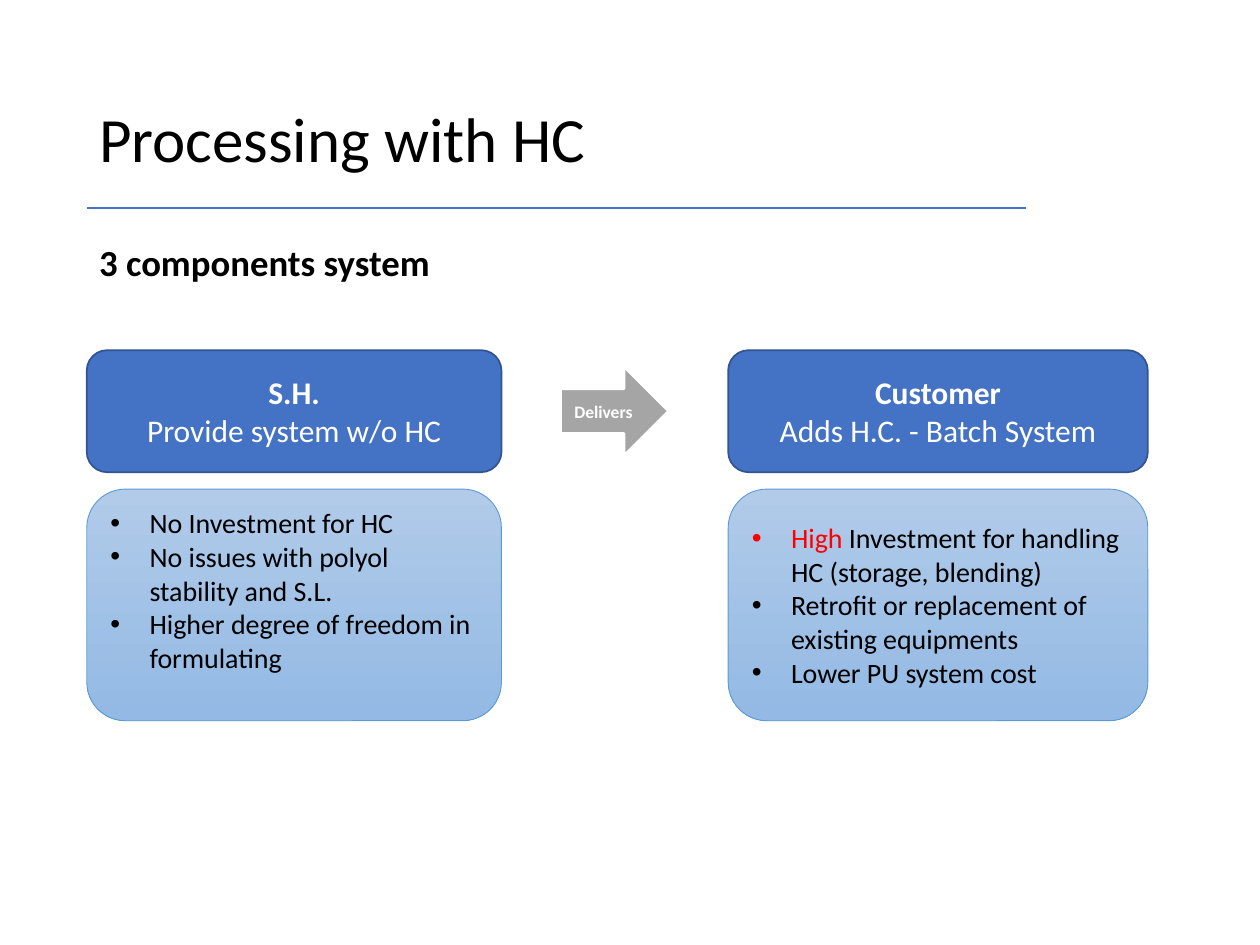
from dataclasses import dataclass

from lxml import etree
from pptx import Presentation
from pptx.dml.color import RGBColor
from pptx.enum.shapes import MSO_CONNECTOR, MSO_SHAPE
from pptx.enum.text import MSO_ANCHOR, PP_ALIGN
from pptx.oxml.ns import qn
from pptx.util import Cm, Pt

ROUND = MSO_SHAPE.ROUNDED_RECTANGLE
ARROW = MSO_SHAPE.RIGHT_ARROW
LINE = MSO_CONNECTOR.STRAIGHT
MIDDLE, TOP = MSO_ANCHOR.MIDDLE, MSO_ANCHOR.TOP
CENTER, LEFT = PP_ALIGN.CENTER, PP_ALIGN.LEFT


@dataclass(frozen=True)
class Theme:
    """Hold the colours, font and type sizes."""
    font: str = "Calibri"
    ink: str = "000000"
    white: str = "FFFFFF"
    blue: str = "4472C4"
    edge: str = "325491"
    rim: str = "5B9BD5"
    light: str = "B1CBE9"
    deep: str = "93B9E4"
    gray: str = "A5A5A5"
    red: str = "FF0000"
    title: int = 36
    sub: int = 21
    head: int = 18
    body: int = 16
    tag: int = 10


THEME = Theme()


def rgb(code):
    """Turn a hex code into a colour."""
    return RGBColor.from_string(code)


def style(para, size, color, bold=False, align=LEFT):
    """Set the font and alignment of a paragraph."""
    para.alignment = align
    font = para.font
    font.name, font.size, font.bold = THEME.font, Pt(size), bold
    font.color.rgb = rgb(color)


def add_text(slide, box, text, size, bold=False, anchor=TOP):
    """Add a one-line text box and return its paragraph."""
    frame = slide.shapes.add_textbox(*map(Cm, box)).text_frame
    frame.word_wrap = True
    frame.vertical_anchor = anchor
    para = frame.paragraphs[0]
    para.text = text
    style(para, size, THEME.ink, bold)
    return para


def add_rule(slide, left, right, top):
    """Draw the level line below the title."""
    rule = slide.shapes.add_connector(LINE, Cm(left), Cm(top), Cm(right), Cm(top))
    rule.line.color.rgb = rgb(THEME.blue)
    rule.line.width = Pt(1)
    etree.SubElement(rule._element.spPr, qn("a:effectLst"))


def add_shape(slide, kind, box, edge, width):
    """Add an outlined shape without shadow."""
    shape = slide.shapes.add_shape(kind, *map(Cm, box))
    shape.shadow.inherit = False
    shape.line.color.rgb = rgb(edge)
    shape.line.width = Pt(width)
    shape.text_frame.vertical_anchor = MIDDLE
    return shape


def add_label(slide, kind, box, fill, edge, width, lines, size):
    """Add a solid shape with centred lines, the first one bold."""
    shape = add_shape(slide, kind, box, edge, width)
    shape.fill.solid()
    shape.fill.fore_color.rgb = rgb(fill)
    frame = shape.text_frame
    frame.text = "\n".join(lines)
    for row, para in enumerate(frame.paragraphs):
        style(para, size, THEME.white, row == 0, CENTER)


def add_bullet(para):
    """Give a paragraph a hanging bullet."""
    props = para._p.get_or_add_pPr()
    props.set("marL", str(Cm(0.79)))
    props.set("indent", str(Cm(-0.79)))
    etree.SubElement(props, qn("a:buFont"), typeface="Arial")
    etree.SubElement(props, qn("a:buChar"), char="•")


def add_list(slide, box, items, base):
    """Add a shaded card of bullets, each made of (text, colour) runs."""
    shape = add_shape(slide, ROUND, box, THEME.rim, 0.5)
    shape.fill.gradient()
    shape.fill.gradient_angle = 270
    for stop, color in zip(shape.fill.gradient_stops, (THEME.light, THEME.deep)):
        stop.color.rgb = rgb(color)
    frame = shape.text_frame
    frame.margin_bottom = Cm(base)
    for row, runs in enumerate(items):
        para = frame.add_paragraph() if row else frame.paragraphs[0]
        add_bullet(para)
        style(para, THEME.body, THEME.ink)
        for text, color in runs:
            run = para.add_run()
            run.text = text
            if color != THEME.ink:
                run.font.color.rgb = rgb(color)


def main():
    """Build the slide and save it."""
    deck = Presentation()
    deck.slide_width, deck.slide_height = Cm(25.4), Cm(19.05)
    slide = deck.slides.add_slide(deck.slide_layouts[6])
    left, ink = 1.75, THEME.ink

    add_rule(slide, left, 20.68, 4.19)
    title = add_text(slide, (left, 1.02, 18.95, 3.68), "Processing with HC",
                     THEME.title, anchor=MIDDLE)
    title.line_spacing = 0.9
    add_text(slide, (left, 4.7, 19.28, 1.14), "3 components system", THEME.sub, True)

    sides = (
        (left, 8.36, ("S.H.", "Provide system w/o HC"), 0.73, (
            [("No Investment for HC", ink)],
            [("No issues with polyol stability and S.L.", ink)],
            [("Higher degree of freedom in formulating", ink)])),
        (14.68, 8.46, ("Customer", "Adds H.C. - Batch System"), 0.13, (
            [("High ", THEME.red),
             ("Investment for handling HC (storage, blending)", ink)],
            [("Retrofit or replacement of existing equipments", ink)],
            [("Lower PU system cost", ink)])),
    )
    for x, wide, lines, base, items in sides:
        add_label(slide, ROUND, (x, 7.06, wide, 2.46), THEME.blue, THEME.edge, 1,
                  lines, THEME.head)
        add_list(slide, (x, 9.86, wide, 4.67), items, base)
    add_label(slide, ARROW, (11.3, 7.39, 2.18, 1.8), THEME.gray, THEME.white, 1.5,
              ("Delivers",), THEME.tag)

    deck.save("out.pptx")


if __name__ == "__main__":
    main()
